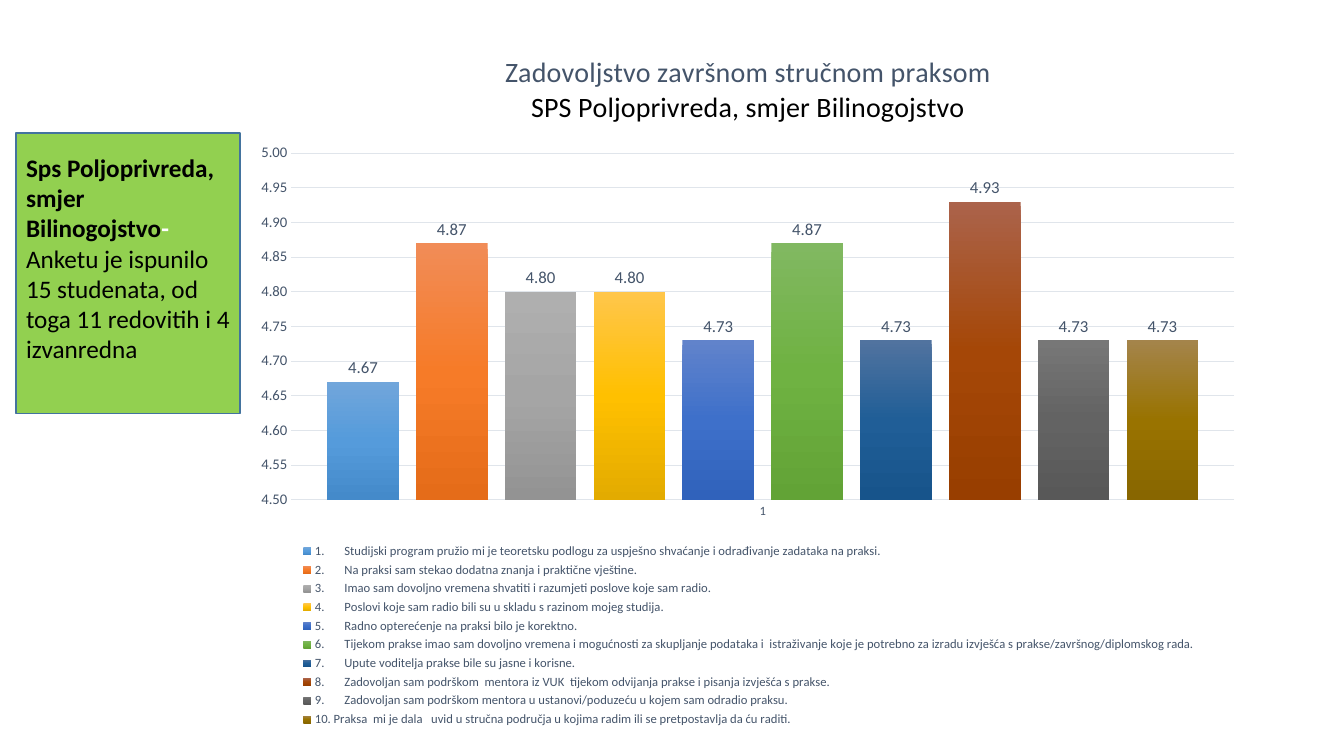
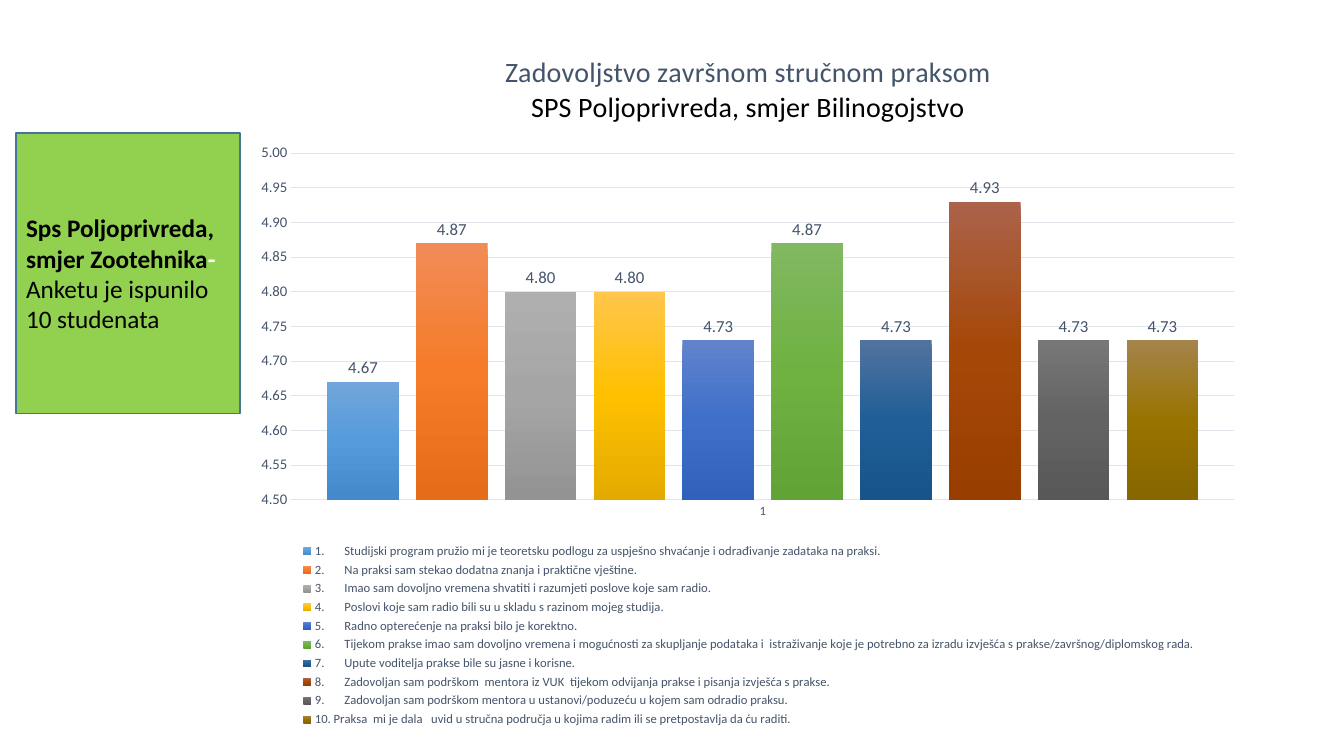
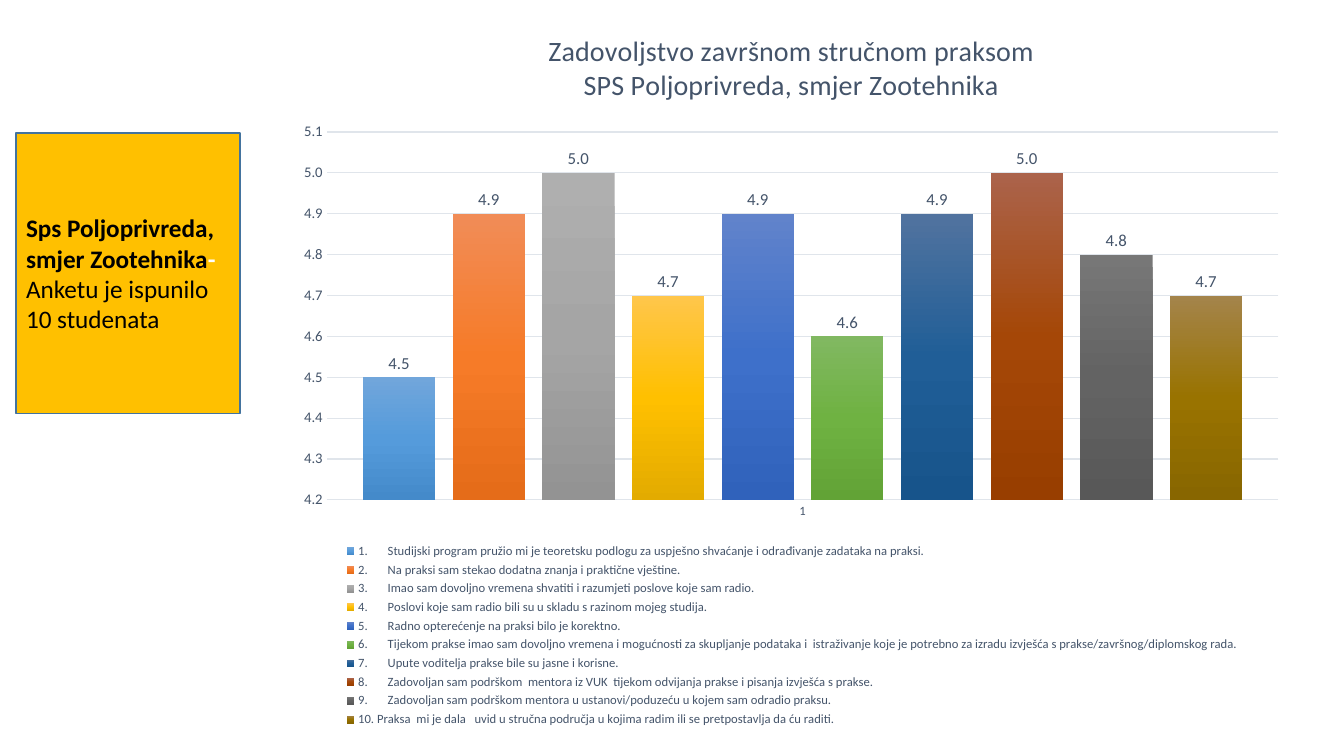
from copy import deepcopy

from lxml.etree import SubElement
from pptx import Presentation
from pptx.chart.data import CategoryChartData
from pptx.dml.color import RGBColor
from pptx.enum.chart import XL_CHART_TYPE, XL_LABEL_POSITION, XL_LEGEND_POSITION, XL_TICK_MARK
from pptx.enum.shapes import MSO_SHAPE
from pptx.enum.text import MSO_ANCHOR, PP_ALIGN
from pptx.oxml.ns import qn
from pptx.util import Inches, Pt

BLACK = RGBColor(0x00, 0x00, 0x00)
WHITE = RGBColor(0xFF, 0xFF, 0xFF)
SLATE = RGBColor(0x44, 0x54, 0x6A)
GRID = RGBColor(0xE0, 0xE5, 0xEB)
BORDER = RGBColor(0x43, 0x73, 0x9E)
GREEN = RGBColor(0x92, 0xD0, 0x50)
AMBER = RGBColor(0xFF, 0xC0, 0x00)
GRADIENTS = [
    [RGBColor.from_string(colour) for colour in stops.split()]
    for stops in (
        "71A6DB 559BDB 448ACA",
        "F18C57 F67B28 E56C19",
        "AFAFAF A5A5A5 939393",
        "FFC64B FFC000 E3AB00",
        "6183CB 3E70CA 3062BB",
        "81B861 6FB242 62A336",
        "51739F 205E97 17548B",
        "AB634B A54707 983E00",
        "777777 636363 585858",
        "A4844B 997300 886600",
    )
]
QUESTIONS = [
    "Studijski program pružio mi je teoretsku podlogu za uspješno shvaćanje i odrađivanje zadataka na praksi.",
    "Na praksi sam stekao dodatna znanja i praktične vještine.",
    "Imao sam dovoljno vremena shvatiti i razumjeti poslove koje sam radio.",
    "Poslovi koje sam radio bili su u skladu s razinom mojeg studija.",
    "Radno opterećenje na praksi bilo je korektno.",
    "Tijekom prakse imao sam dovoljno vremena i mogućnosti za skupljanje podataka i  istraživanje "
    "koje je potrebno za izradu izvješća s prakse/završnog/diplomskog rada.",
    "Upute voditelja prakse bile su jasne i korisne.",
    "Zadovoljan sam podrškom  mentora iz VUK  tijekom odvijanja prakse i pisanja izvješća s prakse.",
    "Zadovoljan sam podrškom mentora u ustanovi/poduzeću u kojem sam odradio praksu.",
    "Praksa  mi je dala   uvid u stručna područja u kojima radim ili se pretpostavlja da ću raditi.",
]
NUMBER_GAP = chr(160) * 6
TITLE = "Zadovoljstvo završnom stručnom praksom"
BREEDING = {
    "area": (2.39, 0.31, 10.06, 6.94),
    "plot_area": (2.89, 1.52, 9.35, 3.44),
    "title": [(TITLE, SLATE), ("SPS Poljoprivreda, smjer Bilinogojstvo", BLACK)],
    "values": [4.67, 4.87, 4.8, 4.8, 4.73, 4.87, 4.73, 4.93, 4.73, 4.73],
    "scale": {"minimum_scale": 4.5, "maximum_scale": 5, "major_unit": 0.05},
    "number_format": "0.00",
}
LIVESTOCK = {
    "area": (2.82, 0.09, 10.06, 7.16),
    "plot_area": (3.24, 1.31, 9.44, 3.65),
    "title": [(TITLE, SLATE), ("SPS Poljoprivreda, smjer Zootehnika", SLATE)],
    "values": [4.5, 4.9, 5, 4.7, 4.9, 4.6, 4.9, 5, 4.8, 4.7],
    "scale": {"minimum_scale": 4.2, "maximum_scale": 5.1, "major_unit": 0.1},
    "number_format": "0.0",
}


def apply(target, **values):
    """Set every given attribute on the target."""
    for name, value in values.items():
        setattr(target, name, value)


class SurveyDeck:
    """Hold the shared style and the current slide."""

    def __init__(self):
        """Start an empty widescreen presentation."""
        self.presentation = Presentation()
        apply(self.presentation, slide_width=Inches(13.33), slide_height=Inches(7.5))
        self.slide = None

    def new_slide(self):
        """Add a blank slide and make it current."""
        self.slide = self.presentation.slides.add_slide(self.presentation.slide_layouts[6])

    def style_font(self, font, size, colour=SLATE, bold=False):
        """Give a font the shared family and the given look."""
        apply(font, name="Calibri", size=Pt(size), bold=bold)
        font.color.rgb = colour

    def note(self, fill, programme, answer, bottom=0.05):
        """Draw the coloured box that tells who answered."""
        box = self.slide.shapes.add_shape(
            MSO_SHAPE.RECTANGLE, Inches(0.16), Inches(1.32), Inches(2.22), Inches(2.78)
        )
        box.shadow.inherit = False
        box.fill.solid()
        box.fill.fore_color.rgb = fill
        box.line.color.rgb = BORDER
        box.line.width = Pt(1)
        frame = box.text_frame
        apply(frame, word_wrap=True, vertical_anchor=MSO_ANCHOR.MIDDLE, margin_bottom=Inches(bottom))
        paragraph = frame.paragraphs[0]
        paragraph.alignment = PP_ALIGN.LEFT
        for text, colour, bold in ((programme, BLACK, True), ("- ", WHITE, True), (answer, BLACK, False)):
            run = paragraph.add_run()
            run.text = text
            self.style_font(run.font, 18, colour, bold)

    def chart(self, area, plot_area, title, values, scale, number_format):
        """Draw the column chart with one series for each question."""
        data = CategoryChartData(number_format=number_format)
        data.categories = ["1"]
        for number, (question, value) in enumerate(zip(QUESTIONS, values), 1):
            gap = NUMBER_GAP if number < 10 else ""
            data.add_series(f"{number}.{gap} {question}", [value])
        chart = self.slide.shapes.add_chart(
            XL_CHART_TYPE.COLUMN_CLUSTERED, *map(Inches, area), data
        ).chart
        self.style_font(chart.font, 10, BLACK)
        self.chart_title(chart, title)
        self.axes(chart, scale, number_format)
        self.columns(chart, number_format)
        self.place_plot(chart, area, plot_area)
        chart.has_legend = True
        apply(chart.legend, position=XL_LEGEND_POSITION.BOTTOM, include_in_layout=False)
        self.style_font(chart.legend.font, 9)

    def chart_title(self, chart, lines):
        """Write the chart title, one paragraph a line."""
        chart.has_title = True
        chart.chart_title.include_in_layout = False
        frame = chart.chart_title.text_frame
        for index, (text, colour) in enumerate(lines):
            paragraph = frame.add_paragraph() if index else frame.paragraphs[0]
            run = paragraph.add_run()
            run.text = text
            self.style_font(run.font, 20, colour)

    def axes(self, chart, scale, number_format):
        """Format both axes and the gridlines."""
        category, value = chart.category_axis, chart.value_axis
        for axis, size in ((category, 9), (value, 10.5)):
            apply(axis, major_tick_mark=XL_TICK_MARK.NONE, minor_tick_mark=XL_TICK_MARK.NONE)
            self.style_font(axis.tick_labels.font, size)
        apply(value, has_major_gridlines=True, **scale)
        apply(value.tick_labels, number_format=number_format, number_format_is_linked=False)
        value.format.line.fill.background()
        for line in (category.format.line, value.major_gridlines.format.line):
            line.color.rgb = GRID
            line.width = Pt(0.75)

    def columns(self, chart, number_format):
        """Format the columns, their gradients and labels."""
        plot = chart.plots[0]
        apply(plot, gap_width=100, overlap=-24, vary_by_categories=False, has_data_labels=True)
        labels = plot.data_labels
        apply(
            labels,
            show_value=True,
            position=XL_LABEL_POSITION.OUTSIDE_END,
            number_format=number_format,
            number_format_is_linked=False,
        )
        self.style_font(labels.font, 12)
        for series in plot.series:
            series.invert_if_negative = False
            series.format.fill.gradient()
            series.format.fill.gradient_angle = 270
        for stop_list in chart.element.iter(qn("a:gsLst")):
            stop_list.insert(1, deepcopy(stop_list[0]))
        for series, colours in zip(plot.series, GRADIENTS):
            stops = series.format.fill.gradient_stops
            for stop, position, colour in zip(stops, (0, 0.5, 1), colours):
                stop.position = position
                stop.color.rgb = colour

    def place_plot(self, chart, area, plot_area):
        """Fix the inner plot area, given in inches on the slide."""
        plot_element = chart.element.find(".//" + qn("c:plotArea"))
        for layout in plot_element.findall(qn("c:layout")):
            plot_element.remove(layout)
        layout = SubElement(plot_element, qn("c:layout"))
        plot_element.insert(0, layout)
        manual = SubElement(layout, qn("c:manualLayout"))
        left, top, width, height = area
        x, y, plot_width, plot_height = plot_area
        settings = {
            "layoutTarget": "inner",
            "xMode": "edge",
            "yMode": "edge",
            "x": (x - left) / width,
            "y": (y - top) / height,
            "w": plot_width / width,
            "h": plot_height / height,
        }
        for name, setting in settings.items():
            SubElement(manual, qn("c:" + name)).set("val", str(setting))


def main():
    """Build the three survey slides."""
    deck = SurveyDeck()
    livestock_note = ("Sps Poljoprivreda, smjer Zootehnika", "Anketu je ispunilo 10 studenata")

    deck.new_slide()
    deck.chart(**BREEDING)
    deck.note(
        GREEN,
        "Sps Poljoprivreda, smjer Bilinogojstvo",
        "Anketu je ispunilo 15 studenata, od toga 11 redovitih i 4 izvanredna",
        bottom=0.35,
    )

    deck.new_slide()
    deck.chart(**BREEDING)
    deck.note(GREEN, *livestock_note)

    deck.new_slide()
    deck.note(AMBER, *livestock_note)
    deck.chart(**LIVESTOCK)

    deck.presentation.save("out.pptx")


if __name__ == "__main__":
    main()
